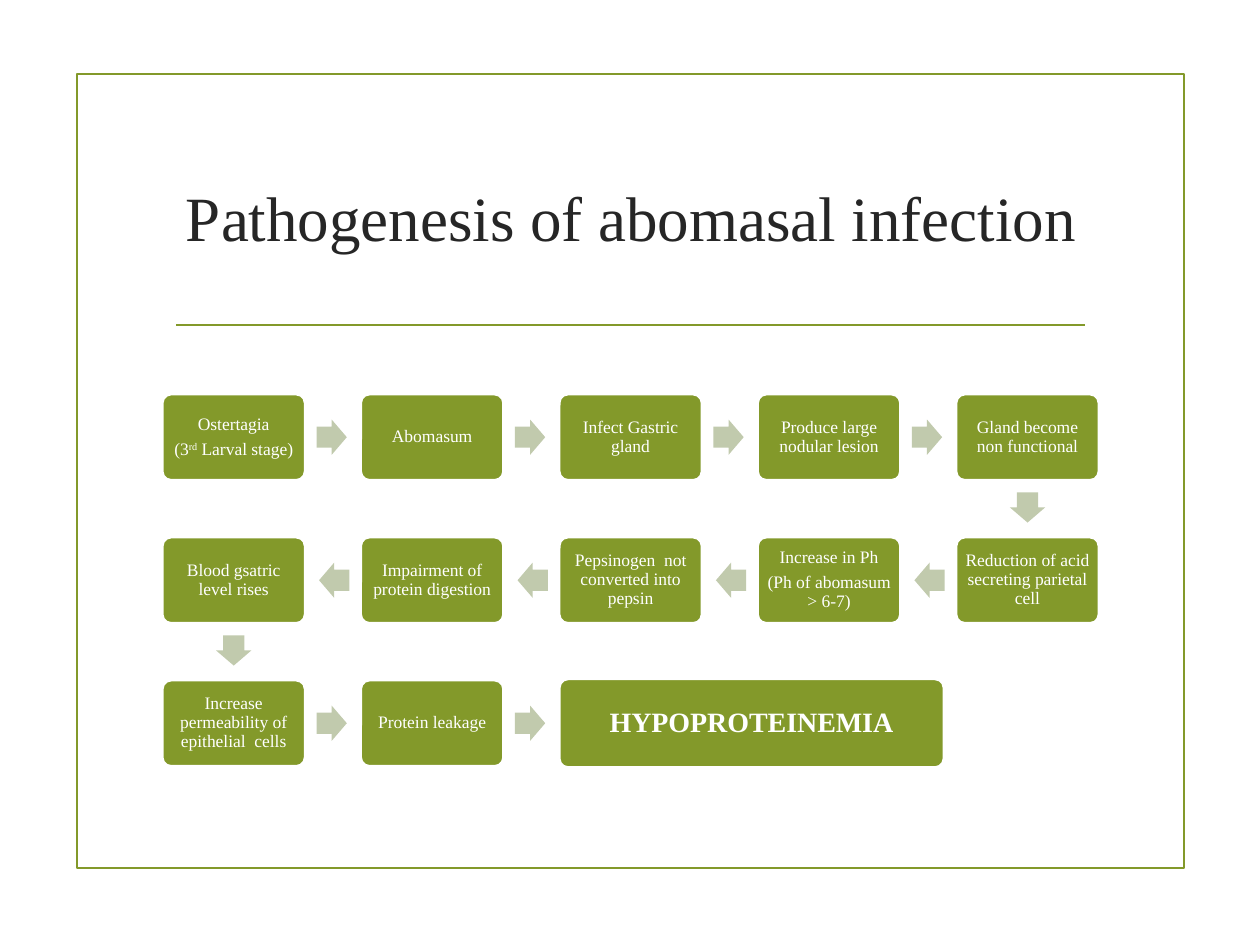
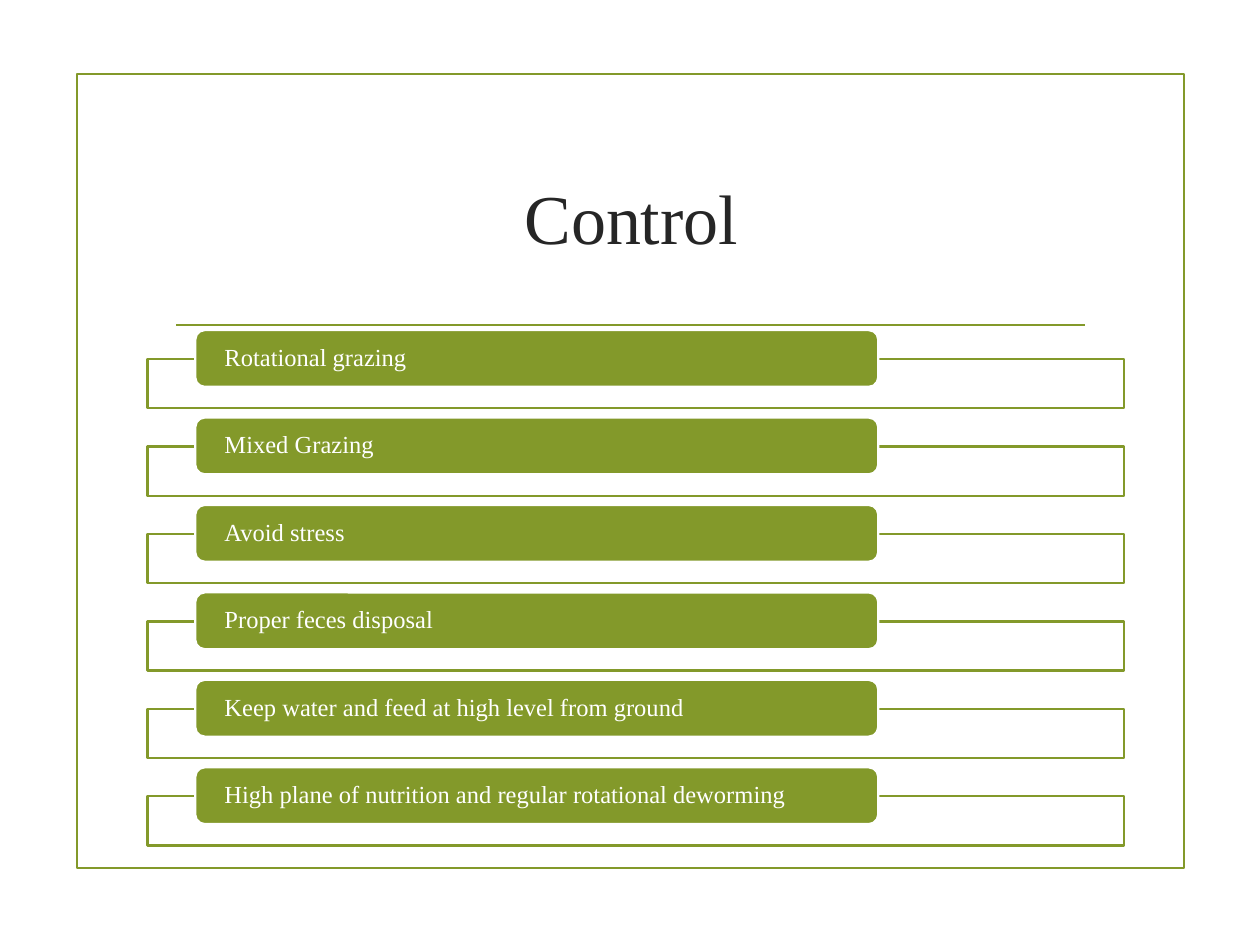
import pptx
import pptx.util
import pptx.dml.color
import pptx.enum.shapes
import pptx.enum.text
import pptx.oxml.ns
from lxml import etree

Inches = pptx.util.Inches
Pt = pptx.util.Pt
SHAPE = pptx.enum.shapes.MSO_SHAPE
ALIGN = pptx.enum.text.PP_ALIGN
MIDDLE = pptx.enum.text.MSO_ANCHOR.MIDDLE
qn = pptx.oxml.ns.qn

# Content: a step is a list of paragraphs, a tuple paragraph has a raised middle part
FLOW_TITLE = "Pathogenesis of abomasal infection"
STEPS = [
    ["Ostertagia", ("(3", "rd", " Larval stage)")],
    ["Abomasum"],
    ["Infect Gastric gland"],
    ["Produce large nodular lesion"],
    ["Gland become non functional"],
    ["Reduction of acid secreting parietal cell"],
    ["Increase in Ph", "(Ph of abomasum > 6-7)"],
    ["Pepsinogen  not converted into pepsin"],
    ["Impairment of protein digestion"],
    ["Blood gsatric level rises"],
    ["Increase permeability of epithelial  cells"],
    ["Protein leakage"],
]
OUTCOME = ["HYPOPROTEINEMIA"]

CONTROL_TITLE = "Control"
MEASURES = [
    "Rotational grazing",
    "Mixed Grazing",
    "Avoid stress",
    "Proper feces disposal",
    "Keep water and feed at high level from ground",
    "High plane of nutrition and regular rotational deworming",
]

# Shared look
COLORS = {"green": "83992A", "sage": "C1CAAD", "ink": "262626", "white": "FFFFFF"}
FONT = "Times New Roman"
LINE_WIDTH = 1.25
STEP_TEXT = {"size": 10, "inset": (0.04, 0.04)}
OUTCOME_TEXT = {"size": 16, "inset": (0.07, 0.07), "bold": True}
MEASURE_TEXT = {"size": 14, "inset": (0.21, 0), "align": ALIGN.LEFT}

# Flow grid: five columns, read left to right and back again
COLS = 5
FIRST_X, LAST_X = 1.29, 7.59
FIRST_Y, LAST_Y = 3.13, 5.4
STEP_W, STEP_H = 1.13, 0.68
OUTCOME_W, OUTCOME_H = 3.05, 0.7
ARROW_W, ARROW_H = 0.24, 0.28
ARROW_SHIFT = 0.01
TURNS = {(1, 0): 0, (0, 1): 90, (-1, 0): 180}

# Control list
FIRST_FRAME_Y, LAST_FRAME_Y = 2.85, 6.32
BAR_RISE = 0.23


def rgb(name):
    return pptx.dml.color.RGBColor.from_string(COLORS[name])


def add_box(s, kind, box, fill=None, line=None, adj=None):
    sp = s.shapes.add_shape(kind, *[Inches(v) for v in box])
    sp.shadow.inherit = False
    if fill:
        sp.fill.solid()
        sp.fill.fore_color.rgb = rgb(fill)
    else:
        sp.fill.background()
    if line:
        sp.line.color.rgb = rgb(line)
        sp.line.width = Pt(LINE_WIDTH)
    else:
        sp.line.fill.background()
    for i, value in enumerate(adj or []):
        sp.adjustments[i] = value
    return sp


def write(sp, paragraphs, size, color="white", inset=(0.1, 0.05),
          align=ALIGN.CENTER, bold=False, spacing=0.9):
    tf = sp.text_frame
    x, y = [Inches(v) for v in inset]
    frame = {"word_wrap": True, "vertical_anchor": MIDDLE, "margin_left": x,
             "margin_right": x, "margin_top": y, "margin_bottom": y}
    for name, value in frame.items():
        setattr(tf, name, value)
    for i, parts in enumerate(paragraphs):
        p = tf.paragraphs[0] if i == 0 else tf.add_paragraph()
        p.alignment = align
        p.line_spacing = spacing
        if i:
            p.space_before = Pt(size * 0.35)
        for j, part in enumerate([parts] if isinstance(parts, str) else parts):
            r = p.add_run()
            r.text = part
            for name, value in {"name": FONT, "size": Pt(size), "bold": bold}.items():
                setattr(r.font, name, value)
            r.font.color.rgb = rgb(color)
            if j == 1:
                r.font._element.set("baseline", "30000")


def add_slide(prs, title, size):
    """Add a slide with the green frame, the title and the rule below it."""
    s = prs.slides.add_slide(prs.slide_layouts[6])
    add_box(s, SHAPE.RECTANGLE, (0.61, 0.59, 8.79, 6.3), line="green")
    rule = s.shapes.add_connector(
        pptx.enum.shapes.MSO_CONNECTOR.STRAIGHT,
        Inches(1.4), Inches(2.58), Inches(8.61), Inches(2.58))
    rule.line.color.rgb = rgb("green")
    rule.line.width = Pt(LINE_WIDTH)
    etree.SubElement(rule._element.spPr, qn("a:effectLst"))
    tb = s.shapes.add_textbox(Inches(1.29), Inches(1), Inches(7.44), Inches(1.43))
    write(tb, [title], size, color="ink", spacing=1)
    return s


def flow_cell(i):
    row, col = divmod(i, COLS)
    return (COLS - 1 - col if row % 2 else col), row


def cell_center(cell):
    col, row = cell
    x = FIRST_X + col * (LAST_X - FIRST_X) / (COLS - 1)
    y = FIRST_Y + row * (LAST_Y - FIRST_Y) / 2
    return x + STEP_W / 2, y + STEP_H / 2


def add_flow_arrow(s, start, end):
    dx, dy = end[0] - start[0], end[1] - start[1]
    (x1, y1), (x2, y2) = cell_center(start), cell_center(end)
    x = (x1 + x2) / 2 - dx * ARROW_SHIFT
    y = (y1 + y2) / 2 - dy * ARROW_SHIFT
    box = (x - ARROW_W / 2, y - ARROW_H / 2, ARROW_W, ARROW_H)
    sp = add_box(s, SHAPE.RIGHT_ARROW, box, fill="sage", adj=[0.6, 0.5])
    sp.rotation = TURNS[dx, dy]


def build_flow(prs):
    s = add_slide(prs, FLOW_TITLE, 36)
    for i, step in enumerate(STEPS + [OUTCOME]):
        last = i == len(STEPS)
        w, h = (OUTCOME_W, OUTCOME_H) if last else (STEP_W, STEP_H)
        x, y = cell_center(flow_cell(i))
        sp = add_box(s, SHAPE.ROUNDED_RECTANGLE, (x - STEP_W / 2, y - h / 2, w, h),
                     fill="green", line="white", adj=[0.1])
        write(sp, step, **(OUTCOME_TEXT if last else STEP_TEXT))
        if not last:
            add_flow_arrow(s, flow_cell(i), flow_cell(i + 1))


def build_control(prs):
    s = add_slide(prs, CONTROL_TITLE, 40)
    pitch = (LAST_FRAME_Y - FIRST_FRAME_Y) / (len(MEASURES) - 1)
    for i, measure in enumerate(MEASURES):
        y = FIRST_FRAME_Y + i * pitch
        frame = add_box(s, SHAPE.RECTANGLE, (1.17, y, 7.75, 0.39),
                        fill="white", line="green")
        white = frame._element.spPr.find(qn("a:solidFill"))[0]
        etree.SubElement(white, qn("a:alpha"), val="90000")
        bar = add_box(s, SHAPE.ROUNDED_RECTANGLE, (1.55, y - BAR_RISE, 5.42, 0.45),
                      fill="green", line="white")
        write(bar, [measure], **MEASURE_TEXT)


def main():
    prs = pptx.Presentation()
    prs.slide_width, prs.slide_height = Inches(10), Inches(7.5)
    build_flow(prs)
    build_control(prs)
    prs.save("out.pptx")


if __name__ == "__main__":
    main()
